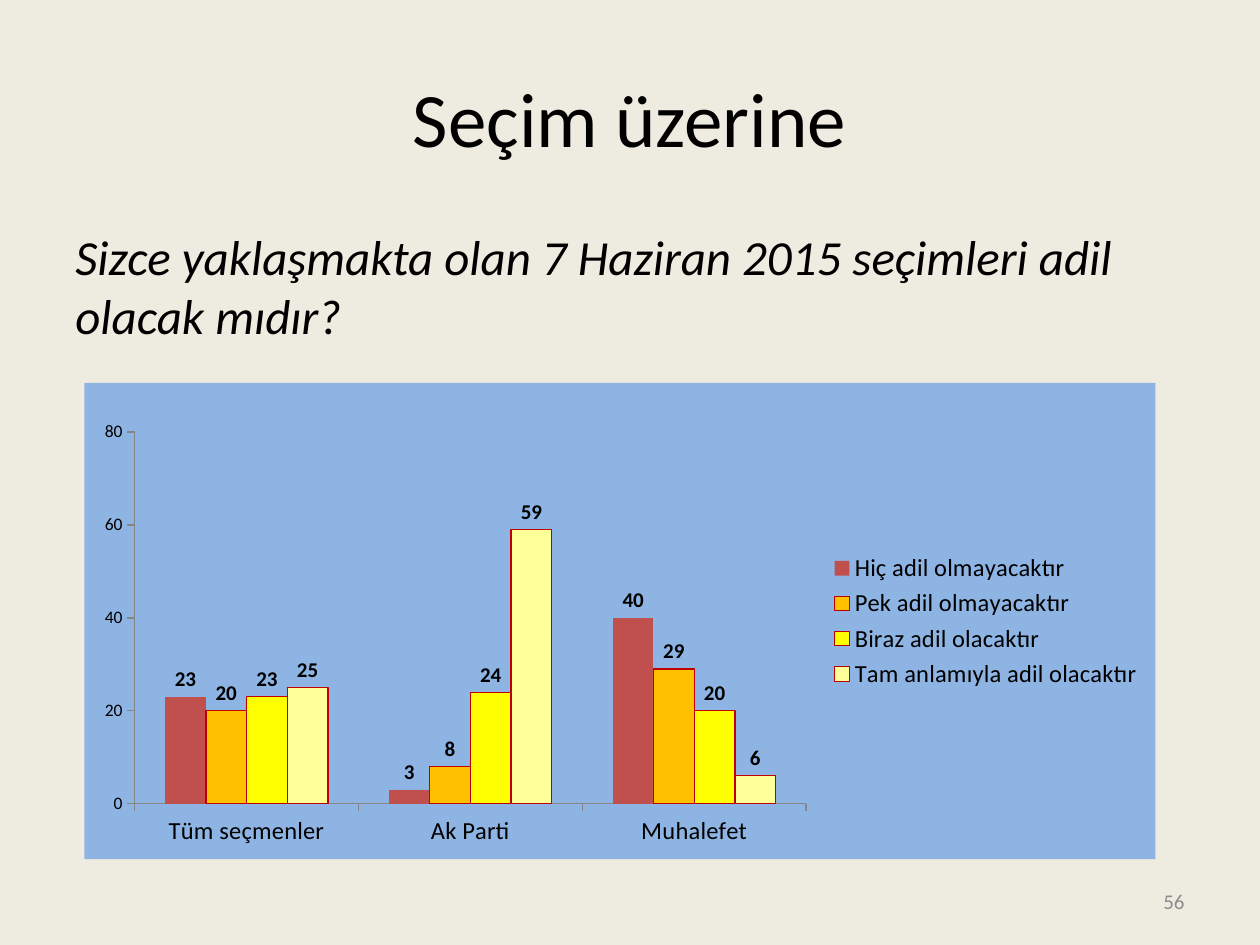
import lxml.etree
import pptx
import pptx.chart.data
import pptx.dml.color
import pptx.enum.chart
import pptx.enum.text
import pptx.oxml
import pptx.oxml.ns
import pptx.util

Cm = pptx.util.Cm
Pt = pptx.util.Pt
ALIGN = pptx.enum.text.PP_ALIGN
ANCHOR = pptx.enum.text.MSO_ANCHOR
TICK = pptx.enum.chart.XL_TICK_MARK

COLOURS = {
    "background": "EEECE1",
    "text": "000000",
    "number": "8C8C8C",
    "panel": "8EB4E3",
    "axis": "868686",
    "outline": "C00000",
    "never": "C0504D",
    "hardly": "FFC000",
    "somewhat": "FFFF00",
    "fully": "FFFF99",
}


def colour(name):
    return pptx.dml.color.RGBColor.from_string(COLOURS[name])


def apply_format(target, values):
    for attribute, value in values.items():
        setattr(target, attribute, value)


presentation = pptx.Presentation()
apply_format(presentation, {"slide_width": Cm(25.4), "slide_height": Cm(19.05)})
slide = presentation.slides.add_slide(presentation.slide_layouts[6])
slide.background.fill.solid()
slide.background.fill.fore_color.rgb = colour("background")

passages = [
    ("Seçim üzerine", (1.27, 0.76, 22.86, 3.18), "text",
     {"size": Pt(44)}, {"alignment": ALIGN.CENTER}, ANCHOR.MIDDLE),
    ("Sizce yaklaşmakta olan 7 Haziran 2015 seçimleri adil olacak mıdır?",
     (1.27, 4.45, 22.86, 3), "text", {"size": Pt(28), "italic": True},
     {"alignment": ALIGN.LEFT, "space_before": Pt(5.6)}, ANCHOR.TOP),
    ("56", (18.2, 17.65, 5.93, 1.02), "number",
     {"size": Pt(12)}, {"alignment": ALIGN.RIGHT}, ANCHOR.MIDDLE),
]
for wording, place, ink, font_format, paragraph_format, anchor in passages:
    passage = slide.shapes.add_textbox(*map(Cm, place)).text_frame
    apply_format(passage, {"word_wrap": True, "vertical_anchor": anchor, "text": wording})
    paragraph = passage.paragraphs[0]
    apply_format(paragraph, paragraph_format)
    apply_format(paragraph.runs[0].font, {"name": "Calibri", **font_format})
    paragraph.runs[0].font.color.rgb = colour(ink)

answers = [
    ("Hiç adil olmayacaktır", (23, 3, 40), "never"),
    ("Pek adil olmayacaktır", (20, 8, 29), "hardly"),
    ("Biraz adil olacaktır", (23, 24, 20), "somewhat"),
    ("Tam anlamıyla adil olacaktır", (25, 59, 6), "fully"),
]
survey = pptx.chart.data.CategoryChartData(number_format="General")
survey.categories = ["Tüm seçmenler", "Ak Parti", "Muhalefet"]
for answer, shares, _ in answers:
    survey.add_series(answer, shares)

chart = slide.shapes.add_chart(
    pptx.enum.chart.XL_CHART_TYPE.COLUMN_CLUSTERED,
    Cm(1.7), Cm(7.72), Cm(21.59), Cm(9.6), survey,
).chart
apply_format(chart, {"has_title": False, "has_legend": True})
apply_format(chart.font, {"name": "Calibri", "size": Pt(10)})
chart.font.color.rgb = colour("text")
apply_format(chart.legend, {
    "position": pptx.enum.chart.XL_LEGEND_POSITION.RIGHT,
    "include_in_layout": False,
})
chart.legend.font.size = Pt(14)

apply_format(chart.value_axis, {
    "minimum_scale": 0, "maximum_scale": 80, "major_unit": 20,
    "has_major_gridlines": False,
})
for axis in (chart.category_axis, chart.value_axis):
    apply_format(axis, {"major_tick_mark": TICK.OUTSIDE, "minor_tick_mark": TICK.NONE})
    axis.format.line.color.rgb = colour("axis")
    axis.format.line.width = Pt(0.75)
chart.category_axis.tick_labels.font.size = Pt(14)

columns = chart.plots[0]
apply_format(columns, {"gap_width": 150, "overlap": 0, "vary_by_categories": False})
for series, (_, _, tint) in zip(columns.series, answers):
    series.format.fill.solid()
    series.format.fill.fore_color.rgb = colour(tint)
    if tint == "never":
        series.format.line.fill.background()
    else:
        series.format.line.color.rgb = colour("outline")
        series.format.line.width = Pt(0.75)
    labels = series.data_labels
    apply_format(labels, {
        "show_value": True,
        "position": pptx.enum.chart.XL_LABEL_POSITION.OUTSIDE_END,
    })
    apply_format(labels.font, {"size": Pt(12), "bold": True})

namespaces = pptx.oxml.ns.nsdecls("c", "a")
panel = (
    f'<c:spPr {namespaces}><a:solidFill><a:srgbClr val="{COLOURS["panel"]}"/>'
    "</a:solidFill><a:ln><a:noFill/></a:ln></c:spPr>"
)
chart_body = chart.element.find(pptx.oxml.ns.qn("c:chart"))
plot_area = chart_body.find(pptx.oxml.ns.qn("c:plotArea"))
chart_body.addnext(pptx.oxml.parse_xml(panel))
plot_area.append(pptx.oxml.parse_xml(panel))

for former_layout in plot_area.findall(pptx.oxml.ns.qn("c:layout")):
    plot_area.remove(former_layout)
layout = pptx.oxml.parse_xml(f"<c:layout {namespaces}><c:manualLayout/></c:layout>")
for tag, value in {
    "layoutTarget": "inner", "xMode": "edge", "yMode": "edge",
    "x": "0.047", "y": "0.103", "w": "0.627", "h": "0.781",
}.items():
    lxml.etree.SubElement(layout[0], pptx.oxml.ns.qn(f"c:{tag}")).set("val", value)
plot_area.insert(0, layout)

presentation.save("out.pptx")
